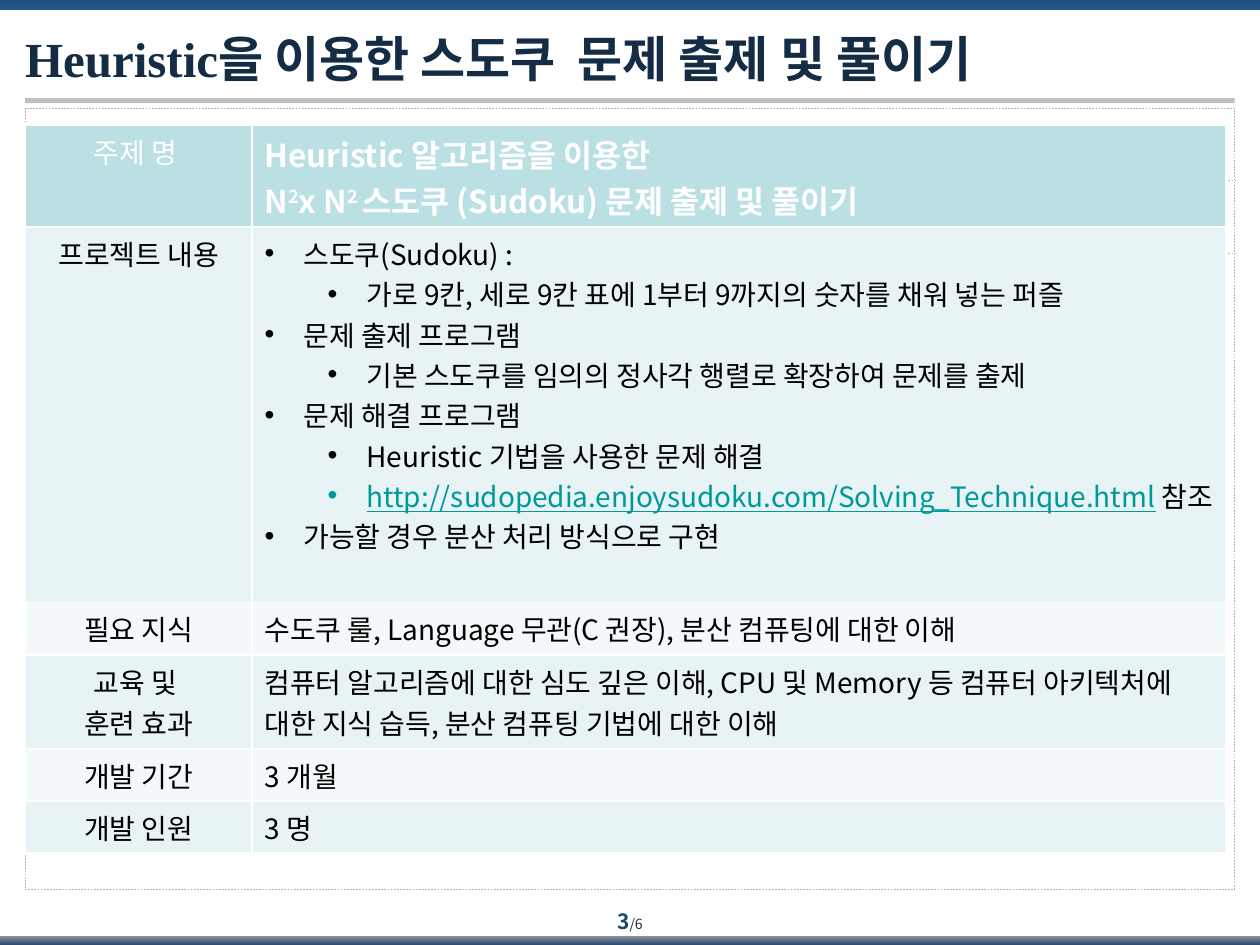
from dataclasses import dataclass

from lxml.etree import SubElement
from pptx import Presentation
from pptx.dml.color import RGBColor
from pptx.enum.dml import MSO_LINE
from pptx.enum.shapes import MSO_CONNECTOR, MSO_SHAPE
from pptx.enum.text import MSO_ANCHOR, PP_ALIGN
from pptx.oxml.ns import qn
from pptx.util import Inches, Pt


@dataclass(frozen=True)
class Theme:
    title_font: str = "Times New Roman"
    body_font: str = "Noto Sans CJK KR"
    title: str = "142C44"
    page: str = "18476D"
    total: str = "292929"
    text: str = "000000"
    white: str = "FFFFFF"
    link: str = "009999"
    rule: str = "C0C0C0"
    guide: str = "B2B2B2"
    header: str = "BBE0E3"
    bands: tuple = ("E7F3F4", "F3F9FA")
    top_bar: tuple = ("1E4F7E", "22598E")
    bottom_bar: tuple = ("8C93A1", "29496D")
    title_size: int = 28
    heading_size: int = 18
    body_size: int = 16
    page_size: int = 12
    total_size: int = 8


THEME = Theme()
WIDTH, HEIGHT = 10, 7.5
MARGIN = 0.02 * WIDTH
CONTENT = WIDTH - 2 * MARGIN
COLUMNS = (1.8, 7.73)
ROW_HEIGHTS = (0.81, 2.98, 0.42, 0.74, 0.42, 0.41)
INDENT, LEVEL_STEP = 0.31, 0.5

TITLE = "Heuristic을 이용한 스도쿠  문제 출제 및 풀이기"
PAGE, TOTAL = "3", "/6"
HEADING_LABEL = "주제 명 "
HEADING = [
    [("Heuristic 알고리즘을 이용한 ", 0)],
    [("N", 0), ("2", 30), ("x N", 0), ("2 ", 30), ("스도쿠 (Sudoku) 문제 출제 및 풀이기", 0)],
]
PROJECT_LABEL = "프로젝트 내용"
PROJECT = [
    (0, "스도쿠(Sudoku) : "),
    (1, "가로 9칸, 세로 9칸 표에 1부터 9까지의 숫자를 채워 넣는 퍼즐"),
    (0, "문제 출제 프로그램"),
    (1, "기본 스도쿠를 임의의 정사각 행렬로 확장하여 문제를 출제"),
    (0, "문제 해결 프로그램"),
    (1, "Heuristic 기법을 사용한 문제 해결"),
    (1, "http://sudopedia.enjoysudoku.com/Solving_Technique.html", " 참조"),
    (0, "가능할 경우 분산 처리 방식으로 구현"),
]
DETAILS = [
    (["필요 지식"], "수도쿠 룰, Language 무관(C 권장), 분산 컴퓨팅에 대한 이해"),
    (["교육 및 ", "훈련 효과"],
     "컴퓨터 알고리즘에 대한 심도 깊은 이해, CPU 및 Memory 등 컴퓨터 "
     "아키텍처에 대한 지식 습득, 분산 컴퓨팅 기법에 대한 이해"),
    (["개발 기간"], "3 개월"),
    (["개발 인원"], "3 명"),
]


def rgb(code):
    return RGBColor.from_string(code)


def add_run(paragraph, text, size, color, bold=False, font=THEME.body_font, raised=0):
    run = paragraph.add_run()
    run.text = text
    run.font.size = Pt(size)
    run.font.bold = bold
    run.font.name = font
    run.font.color.rgb = rgb(color)
    properties = run._r.get_or_add_rPr()
    SubElement(properties, qn("a:ea")).set("typeface", THEME.body_font)
    if raised:
        properties.set("baseline", str(raised * 1000))
    return run


def add_box(slide, left, top, width, height):
    box = slide.shapes.add_shape(
        MSO_SHAPE.RECTANGLE, Inches(left), Inches(top), Inches(width), Inches(height))
    box.shadow.inherit = False
    box.fill.background()
    box.line.fill.background()
    return box


def add_bar(slide, top, height, colors):
    bar = add_box(slide, 0, top, WIDTH, height)
    bar.fill.gradient()
    bar.fill.gradient_angle = 270
    for stop, color in zip(bar.fill.gradient_stops, colors):
        stop.color.rgb = rgb(color)


def style_guide(line):
    line.color.rgb = rgb(THEME.guide)
    line.width = Pt(0.25)
    line.dash_style = MSO_LINE.DASH


def add_frame(slide):
    add_bar(slide, 0, 0.08, THEME.top_bar)
    add_bar(slide, HEIGHT - 0.07, 0.07, THEME.bottom_bar)
    style_guide(add_box(slide, MARGIN, 0.86, CONTENT, 6.2).line)
    for y in (1.43, 2.01):
        guide = slide.shapes.add_connector(
            MSO_CONNECTOR.STRAIGHT, Inches(MARGIN), Inches(y), Inches(WIDTH - MARGIN), Inches(y))
        style_guide(guide.line)
        SubElement(guide._element.spPr, qn("a:effectLst"))
    rule = add_box(slide, MARGIN, 0.78, CONTENT, 0.04)
    rule.fill.solid()
    rule.fill.fore_color.rgb = rgb(THEME.rule)


def add_page_number(slide):
    number = slide.shapes.add_textbox(Inches(4.83), Inches(7.13), Inches(0.34), Inches(0.36))
    frame = number.text_frame
    frame.word_wrap = False
    frame.margin_left = frame.margin_right = 0
    frame.vertical_anchor = MSO_ANCHOR.MIDDLE
    paragraph = frame.paragraphs[0]
    paragraph.alignment = PP_ALIGN.CENTER
    add_run(paragraph, PAGE, THEME.page_size, THEME.page, bold=True)
    add_run(paragraph, TOTAL, THEME.total_size, THEME.total)


def fill_title(title):
    title.left, title.top = Inches(MARGIN), Inches(0.06)
    title.width, title.height = Inches(CONTENT), Inches(0.71)
    frame = title.text_frame
    frame.margin_left = frame.margin_right = frame.margin_top = 0
    frame.margin_bottom = Inches(0.08)
    frame.vertical_anchor = MSO_ANCHOR.BOTTOM
    paragraph = frame.paragraphs[0]
    paragraph.alignment = PP_ALIGN.LEFT
    paragraph.line_spacing = 1.25
    add_run(paragraph, TITLE, THEME.title_size, THEME.title, True, THEME.title_font)


def style_cell(cell, row):
    cell.fill.solid()
    cell.fill.fore_color.rgb = rgb(THEME.bands[(row - 1) % 2] if row else THEME.header)
    properties = cell._tc.get_or_add_tcPr()
    for position, side in enumerate(("lnL", "lnR", "lnT", "lnB")):
        border = properties.makeelement(qn(f"a:{side}"), {"w": str(Pt(1))})
        color = SubElement(SubElement(border, qn("a:solidFill")), qn("a:srgbClr"))
        color.set("val", THEME.white)
        properties.insert(position, border)


def paragraphs_of(cell, count, alignment=PP_ALIGN.LEFT):
    frame = cell.text_frame
    paragraphs = [frame.paragraphs[0]] + [frame.add_paragraph() for _ in range(count - 1)]
    for paragraph in paragraphs:
        paragraph.alignment = alignment
    return paragraphs


def write_lines(cell, lines, alignment=PP_ALIGN.LEFT, color=THEME.text):
    for paragraph, line in zip(paragraphs_of(cell, len(lines), alignment), lines):
        add_run(paragraph, line, THEME.body_size, color)


def write_project(cell):
    for paragraph, (level, *parts) in zip(paragraphs_of(cell, len(PROJECT)), PROJECT):
        paragraph.level = level
        properties = paragraph._p.get_or_add_pPr()
        properties.set("marL", str(Inches(INDENT + level * LEVEL_STEP)))
        properties.set("indent", str(Inches(-INDENT)))
        SubElement(properties, qn("a:buFont")).set("typeface", "Arial")
        SubElement(properties, qn("a:buChar")).set("char", "•")
        for part in parts:
            is_link = part.startswith("http")
            run = add_run(paragraph, part, THEME.body_size, THEME.link if is_link else THEME.text)
            run.font.underline = is_link


def add_topic_table(slide):
    table = slide.shapes.add_table(
        len(ROW_HEIGHTS), len(COLUMNS), Inches(MARGIN), Inches(0.99),
        Inches(sum(COLUMNS)), Inches(sum(ROW_HEIGHTS))).table
    table.first_row = table.horz_banding = False
    for column, width in zip(table.columns, COLUMNS):
        column.width = Inches(width)
    for index, height in enumerate(ROW_HEIGHTS):
        table.rows[index].height = Inches(height)
        for cell in table.rows[index].cells:
            style_cell(cell, index)

    labels = [[HEADING_LABEL], [PROJECT_LABEL]] + [label for label, _ in DETAILS]
    for row, label in enumerate(labels):
        write_lines(table.cell(row, 0), label, PP_ALIGN.CENTER, THEME.text if row else THEME.white)
    for paragraph, parts in zip(paragraphs_of(table.cell(0, 1), len(HEADING)), HEADING):
        for text, raised in parts:
            add_run(paragraph, text, THEME.heading_size, THEME.white, True, raised=raised)
    write_project(table.cell(1, 1))
    for row, (_, detail) in enumerate(DETAILS, start=2):
        write_lines(table.cell(row, 1), [detail])


def main():
    deck = Presentation()
    deck.slide_width, deck.slide_height = Inches(WIDTH), Inches(HEIGHT)
    slide = deck.slides.add_slide(deck.slide_layouts[5])
    add_frame(slide)
    add_page_number(slide)
    fill_title(slide.shapes.title)
    add_topic_table(slide)
    deck.save("out.pptx")


if __name__ == "__main__":
    main()
